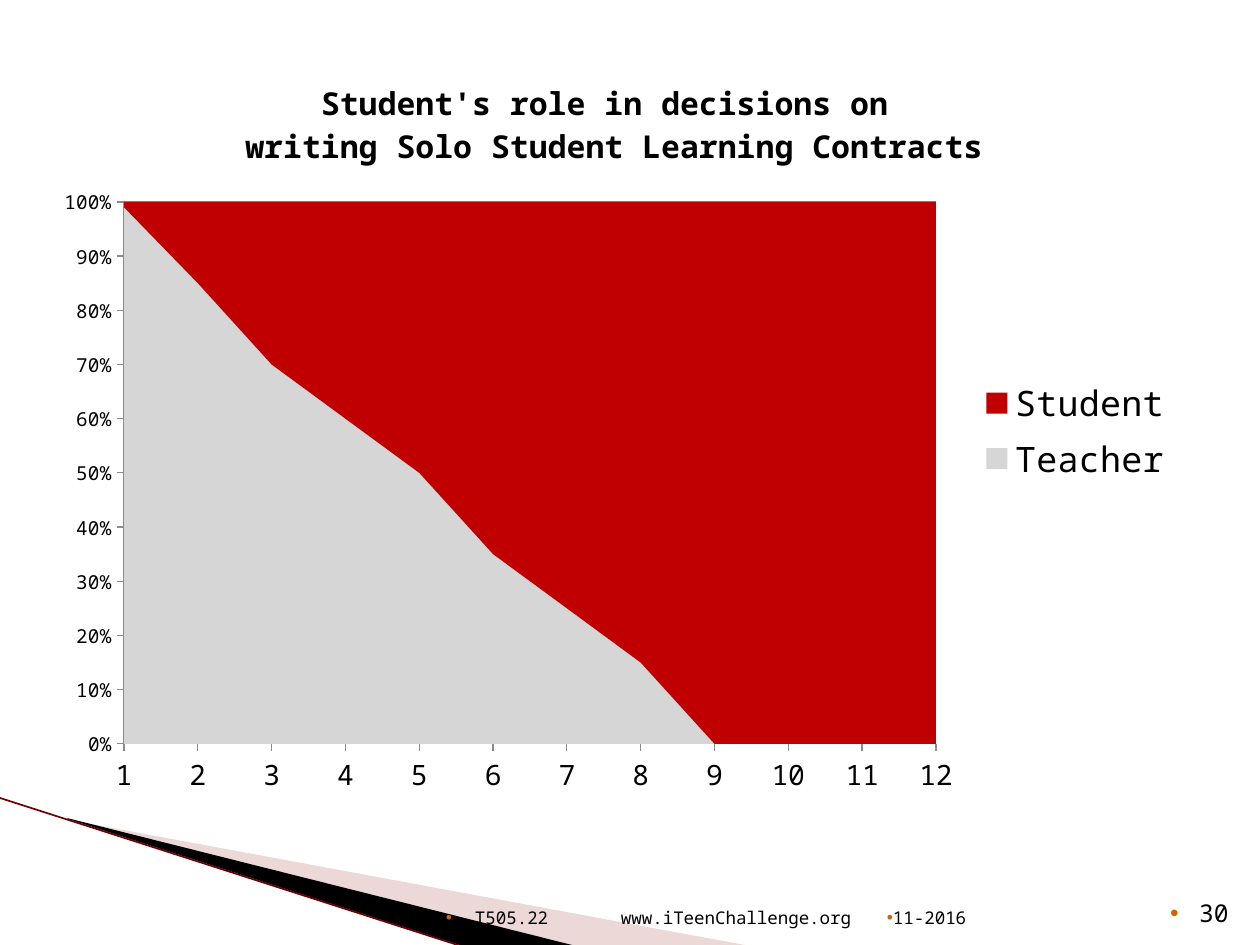
import pptx
import pptx.chart.data
import pptx.dml.color
import pptx.enum.chart
import pptx.enum.shapes
import pptx.enum.text
import pptx.oxml.ns
import pptx.util
import lxml.etree

PX = 914400 // 126
FONT = "Noto Sans Mono"
COLORS = {"text": "000000", "teacher": "D6D6D6", "student": "C00000", "axis": "8B8B8B",
          "wedge": "D29E9E", "edge": "700000", "bullet": "CC6600"}

TITLE_LINES = ["Student's role in decisions on ", "writing Solo Student Learning Contracts"]
TEACHER = [99, 85, 70, 60, 50, 35, 25, 15, 0, 0, 0, 0]
SERIES = {"teacher": TEACHER, "student": [100 - share for share in TEACHER]}
CHART_BOX = (42, 53, 1144, 756)
PLOT_BOX = (124, 202, 812, 542)
WEDGES = [
    ("wedge", 40, [(69, 820), (750, 946), (575, 946), (69, 819)]),
    ("text", 100, [(67, 818), (576, 946), (469, 948), (68, 819)]),
]
EDGE = (0, 798, 467, 948)
ALIGN = pptx.enum.text.PP_ALIGN
FOOTERS = [
    {"text": "T505.22\twww.iTeenChallenge.org", "box": (346, 883, 528, 51), "size": 10,
     "align": ALIGN.LEFT, "inset": 100, "hang": 29, "tab": 175},
    {"text": "11-2016", "box": (874, 883, 265, 51), "size": 10,
     "align": ALIGN.LEFT, "inset": 13, "hang": 0, "tab": 0},
    {"text": "30", "box": (1144, 883, 97, 51), "size": 14,
     "align": ALIGN.RIGHT, "inset": 13, "hang": 29, "tab": 0},
]


def rgb(name):
    return pptx.dml.color.RGBColor.from_string(COLORS[name])


def child(parent, tag, **attributes):
    values = {key: str(value) for key, value in attributes.items()}
    return lxml.etree.SubElement(parent, pptx.oxml.ns.qn(tag), values)


def style_font(font, size, bold=False):
    values = {"size": pptx.util.Pt(size), "name": FONT, "bold": bold}
    for key, value in values.items():
        setattr(font, key, value)
    font.color.rgb = rgb("text")


def add_wedge(page, color, opacity, points):
    builder = page.shapes.build_freeform(*points[0], scale=PX)
    builder.add_line_segments(points[1:], close=True)
    wedge = builder.convert_to_shape()
    wedge.shadow.inherit = False
    wedge.fill.solid()
    wedge.fill.fore_color.rgb = rgb(color)
    wedge.line.fill.background()
    if opacity < 100:
        fill = wedge.element.spPr.find(pptx.oxml.ns.qn("a:solidFill"))
        child(fill[0], "a:alpha", val=opacity * 1000)


def add_edge(page):
    edge = page.shapes.add_connector(pptx.enum.shapes.MSO_CONNECTOR.STRAIGHT,
                                     *[value * PX for value in EDGE])
    edge.line.color.rgb = rgb("edge")
    edge.line.width = pptx.util.Pt(0.95)
    child(edge.element.spPr, "a:effectLst")


def add_footer(page, footer):
    box = page.shapes.add_textbox(*[value * PX for value in footer["box"]])
    frame = box.text_frame
    values = {"word_wrap": True, "margin_left": footer["inset"] * PX,
              "vertical_anchor": pptx.enum.text.MSO_ANCHOR.BOTTOM}
    for key, value in values.items():
        setattr(frame, key, value)
    para = frame.paragraphs[0]
    para.text = footer["text"]
    para.alignment = footer["align"]
    settings = para._p.get_or_add_pPr()
    settings.set("marL", str(footer["hang"] * PX))
    settings.set("indent", str(-footer["hang"] * PX))
    child(child(settings, "a:buClr"), "a:srgbClr", val=COLORS["bullet"])
    child(settings, "a:buFont", typeface="Arial")
    child(settings, "a:buChar", char="•")
    if footer["tab"]:
        child(child(settings, "a:tabLst"), "a:tab", pos=footer["tab"] * PX, algn="l")
    style_font(para.runs[0].font, footer["size"])


def place_plot(chart):
    plot_area = chart.element.find(".//" + pptx.oxml.ns.qn("c:plotArea"))
    for old in plot_area.findall(pptx.oxml.ns.qn("c:layout")):
        plot_area.remove(old)
    layout = lxml.etree.Element(pptx.oxml.ns.qn("c:layout"))
    plot_area.insert(0, layout)
    manual = child(layout, "c:manualLayout")
    left, top, width, height = CHART_BOX
    x, y, w, h = PLOT_BOX
    child(manual, "c:layoutTarget", val="inner")
    child(manual, "c:xMode", val="edge")
    child(manual, "c:yMode", val="edge")
    for key, value in {"x": (x - left) / width, "y": (y - top) / height,
                       "w": w / width, "h": h / height}.items():
        child(manual, "c:" + key, val=round(value, 4))


def add_chart(page):
    data = pptx.chart.data.CategoryChartData(number_format="General")
    data.categories = [str(number + 1) for number in range(len(TEACHER))]
    for name, values in SERIES.items():
        data.add_series(name.capitalize(), values)
    chart = page.shapes.add_chart(pptx.enum.chart.XL_CHART_TYPE.AREA_STACKED_100,
                                  *[value * PX for value in CHART_BOX], data).chart
    style_font(chart.font, 10)
    chart.plots[0].vary_by_categories = False
    for series, name in zip(chart.plots[0].series, SERIES):
        series.format.fill.solid()
        series.format.fill.fore_color.rgb = rgb(name)
        series.format.line.fill.background()

    chart.has_title = True
    frame = chart.chart_title.text_frame
    for index, line in enumerate(TITLE_LINES):
        para = frame.add_paragraph() if index else frame.paragraphs[0]
        span = para.add_run()
        span.text = line
        style_font(span.font, 18, True)
    chart.chart_title.include_in_layout = False

    chart.has_legend = True
    chart.legend.position = pptx.enum.chart.XL_LEGEND_POSITION.RIGHT
    chart.legend.include_in_layout = False
    style_font(chart.legend.font, 20)

    for axis, size in ((chart.category_axis, 16), (chart.value_axis, 11)):
        axis.major_tick_mark = pptx.enum.chart.XL_TICK_MARK.OUTSIDE
        axis.format.line.color.rgb = rgb("axis")
        axis.format.line.width = pptx.util.Pt(0.75)
        style_font(axis.tick_labels.font, size)
    axis = chart.value_axis
    for key, value in {"minimum_scale": 0, "maximum_scale": 1, "major_unit": 0.1,
                       "has_major_gridlines": True}.items():
        setattr(axis, key, value)
    axis.major_gridlines.format.line.color.rgb = rgb("axis")
    axis.tick_labels.number_format = "0%"
    axis.tick_labels.number_format_is_linked = False
    for crossing in chart.element.iter(pptx.oxml.ns.qn("c:crossBetween")):
        crossing.set("val", "midCat")
    place_plot(chart)


def main():
    deck = pptx.Presentation()
    deck.slide_width, deck.slide_height = 1260 * PX, 945 * PX
    page = deck.slides.add_slide(deck.slide_layouts[6])
    for wedge in WEDGES:
        add_wedge(page, *wedge)
    add_edge(page)
    for footer in FOOTERS:
        add_footer(page, footer)
    add_chart(page)
    deck.save("out.pptx")


if __name__ == "__main__":
    main()
